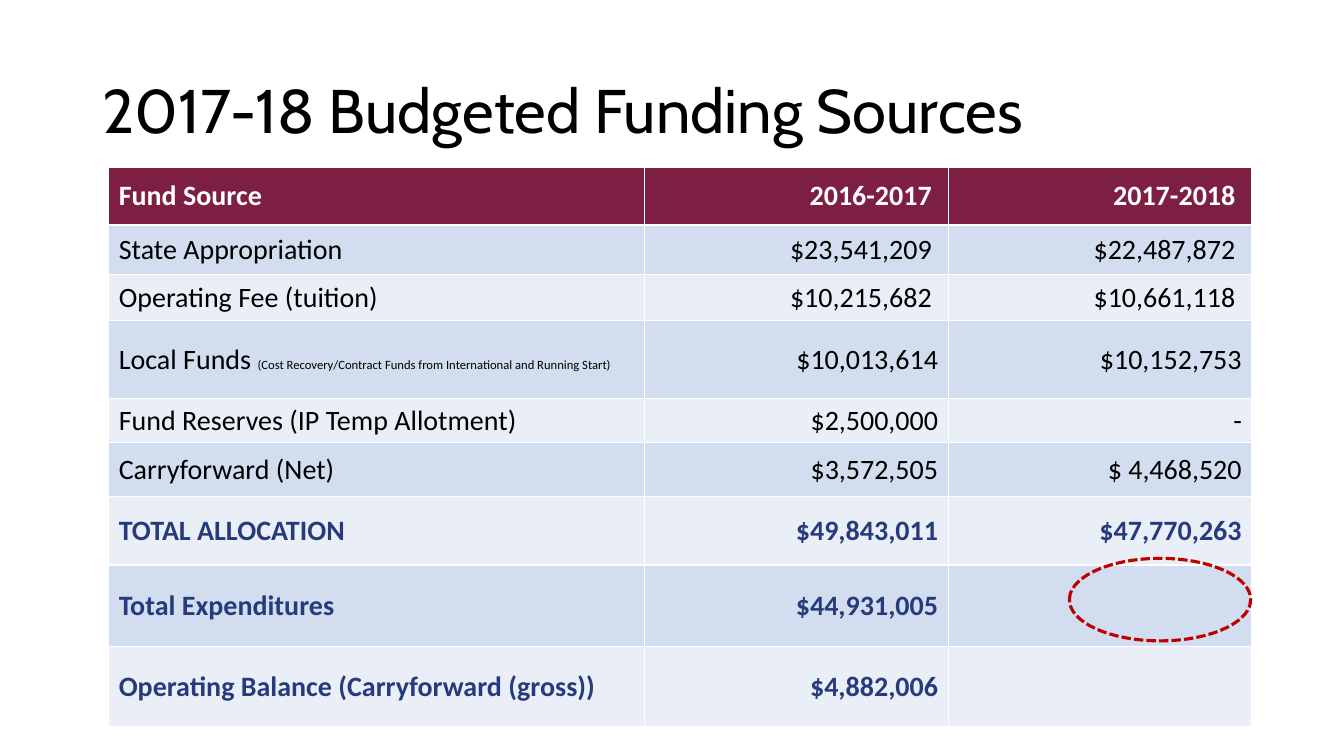
"""Build a slide with a table of budgeted funding sources."""
from pptx import Presentation
from pptx.dml.color import RGBColor
from pptx.enum.dml import MSO_LINE
from pptx.enum.shapes import MSO_SHAPE
from pptx.enum.text import MSO_ANCHOR, PP_ALIGN
from pptx.util import Cm, Pt

MIDDLE = MSO_ANCHOR.MIDDLE
LEFT, RIGHT = PP_ALIGN.LEFT, PP_ALIGN.RIGHT
ELLIPSE = MSO_SHAPE.OVAL
DASH = MSO_LINE.SQUARE_DOT

COLOURS = {
    "black": "000000",
    "white": "FFFFFF",
    "header": "7C1F43",
    "odd": "D2DEEF",
    "even": "EAEFF7",
    "total": "263A7C",
    "marker": "C00000",
}
TITLE_FONT, TABLE_FONT = "Cabin", "Calibri"
COLUMN_WIDTHS = [13.51, 7.65, 7.65]
ROW_HEIGHTS = [1.45, 1.24, 1.17, 1.96, 1.09, 1.35, 1.73, 2.06, 2.01]
FIRST_TOTAL_ROW = 6
FUNDS = [
    ("Fund Source", "2016-2017 ", "2017-2018 "),
    ("State Appropriation", "$23,541,209 ", "$22,487,872 "),
    ("Operating Fee (tuition)", "$10,215,682 ", "$10,661,118 "),
    ("Local Funds ", "$10,013,614", "$10,152,753"),
    ("Fund Reserves (IP Temp Allotment)", "$2,500,000", "-"),
    ("Carryforward (Net)", "$3,572,505", "$ 4,468,520"),
    ("TOTAL ALLOCATION", "$49,843,011", "$47,770,263"),
    ("Total Expenditures", "$44,931,005", ""),
    ("Operating Balance (Carryforward (gross))", "$4,882,006", ""),
]
LOCAL_FUNDS_ROW = 3
LOCAL_FUNDS_NOTE = "(Cost Recovery/Contract Funds from International and Running Start)"


def colour(name):
    """Return the named colour."""
    return RGBColor.from_string(COLOURS[name])


def format_span(span, font, size, ink, bold=False):
    """Set the font of one run."""
    span.font.name = font
    span.font.size = Pt(size)
    span.font.bold = bold
    span.font.color.rgb = colour(ink)


def set_title(page, text):
    """Fill and place the title placeholder."""
    box = page.shapes.title
    box.left, box.top, box.width, box.height = Cm(2.33), Cm(1.01), Cm(29.21), Cm(3.68)
    box.text_frame.text = text
    box.text_frame.vertical_anchor = MIDDLE
    para = box.text_frame.paragraphs[0]
    para.alignment = LEFT
    para.line_spacing = 0.9
    format_span(para.runs[0], TITLE_FONT, 44, "black")


def row_style(row):
    """Return the fill, text colour and weight of a table row."""
    if row == 0:
        return "header", "white", True
    fill = "odd" if row % 2 else "even"
    if row >= FIRST_TOTAL_ROW:
        return fill, "total", True
    return fill, "black", False


def fill_cell(cell, text, alignment, fill, ink, bold):
    """Write and format one table cell."""
    cell.fill.solid()
    cell.fill.fore_color.rgb = colour(fill)
    cell.vertical_anchor = MIDDLE
    para = cell.text_frame.paragraphs[0]
    para.text = text
    para.alignment = alignment
    for span in para.runs:
        format_span(span, TABLE_FONT, 20, ink, bold)


def add_fund_table(page):
    """Add the table of fund sources by year."""
    frame = page.shapes.add_table(
        len(FUNDS), len(COLUMN_WIDTHS), Cm(2.74), Cm(4.22),
        Cm(sum(COLUMN_WIDTHS)), Cm(sum(ROW_HEIGHTS)))
    table = frame.table
    for column, width in zip(table.columns, COLUMN_WIDTHS):
        column.width = Cm(width)
    for row, (texts, height) in enumerate(zip(FUNDS, ROW_HEIGHTS)):
        table.rows[row].height = Cm(height)
        for column, text in enumerate(texts):
            alignment = RIGHT if column else LEFT
            fill_cell(table.cell(row, column), text, alignment, *row_style(row))
    note = table.cell(LOCAL_FUNDS_ROW, 0).text_frame.paragraphs[0].add_run()
    note.text = LOCAL_FUNDS_NOTE
    format_span(note, TABLE_FONT, 9, "black")


def add_marker(page):
    """Add the dashed ellipse around the open expenditure figure."""
    marker = page.shapes.add_shape(ELLIPSE, Cm(26.95), Cm(14.07), Cm(4.57), Cm(2.08))
    marker.shadow.inherit = False
    marker.fill.background()
    marker.line.color.rgb = colour("marker")
    marker.line.width = Pt(2.25)
    marker.line.dash_style = DASH


def main():
    """Build and save the deck."""
    deck = Presentation()
    deck.slide_width, deck.slide_height = Cm(33.87), Cm(19.05)
    page = deck.slides.add_slide(deck.slide_layouts[5])
    set_title(page, "2017-18 Budgeted Funding Sources")
    add_fund_table(page)
    add_marker(page)
    deck.save("out.pptx")


if __name__ == "__main__":
    main()
